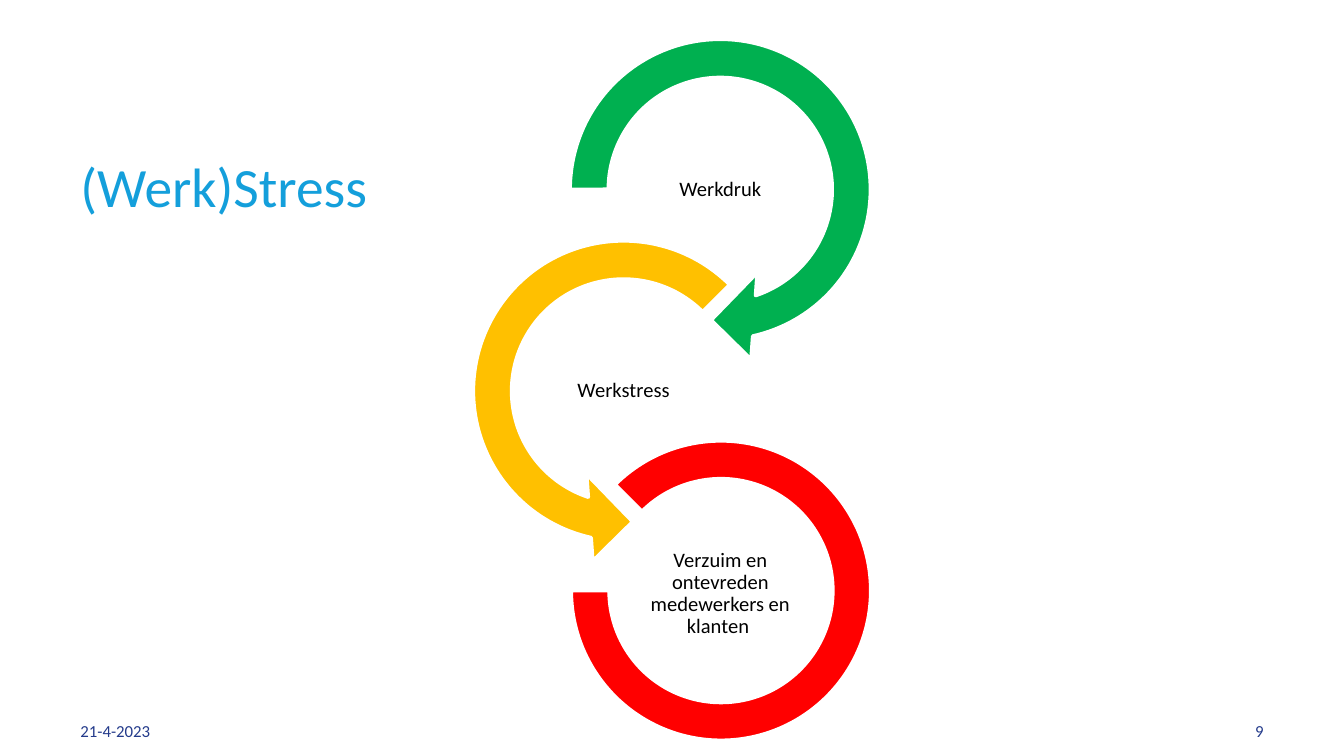
"""Build the (Werk)Stress slide: three chained ring arrows with labels."""
from pptx import Presentation
from pptx import util as u
from pptx.dml.color import RGBColor
from pptx.enum import shapes, text

COLOURS = {
    "green": "00B050",
    "amber": "FFC000",
    "red": "FF0000",
    "white": "FFFFFF",
    "black": "000000",
    "title": "149FDB",
    "footer": "243B8B",
}
FONT = "Calibri"
LABEL_SIZE = (1.44, 0.72)
LABEL_INSETS = (0.01, 0.01, 0.01, 0.01)


def colour(name):
    """Return the named colour."""
    return RGBColor.from_string(COLOURS[name])


def add_text(slide, words, box, size, colour_name, insets,
             anchor=text.MSO_ANCHOR.TOP, align=text.PP_ALIGN.LEFT, spacing=1.0):
    """Add a wrapped text box with one paragraph."""
    shape = slide.shapes.add_textbox(*map(u.Inches, box))
    frame = shape.text_frame
    frame.word_wrap = True
    frame.vertical_anchor = anchor
    (frame.margin_left, frame.margin_top,
     frame.margin_right, frame.margin_bottom) = map(u.Inches, insets)
    paragraph = frame.paragraphs[0]
    paragraph.text = words
    paragraph.alignment = align
    paragraph.line_spacing = spacing
    paragraph.font.name = FONT
    paragraph.font.size = u.Pt(size)
    paragraph.font.color.rgb = colour(colour_name)


def add_ring(slide, kind, box, colour_name, adjustments):
    """Add a ring-like shape with a white outline."""
    shape = slide.shapes.add_shape(kind, *map(u.Inches, box))
    shape.shadow.inherit = False
    shape.fill.solid()
    shape.fill.fore_color.rgb = colour(colour_name)
    shape.line.color.rgb = colour("white")
    shape.line.width = u.Pt(2)
    for index, value in enumerate(adjustments):
        shape.adjustments[index] = value


def add_label(slide, words, left, top):
    """Add a centred label inside a ring."""
    add_text(slide, words, (left, top, *LABEL_SIZE), 11, "black", LABEL_INSETS,
             text.MSO_ANCHOR.MIDDLE, text.PP_ALIGN.CENTER, 0.9)


def add_footer(slide, words, left, top_inset, align):
    """Add a small text at the foot of the slide."""
    add_text(slide, words, (left, 5.21, 2.33, 0.3), 9, "footer",
             (0.1, top_inset, 0.1, 0), text.MSO_ANCHOR.BOTTOM, align)


def main():
    """Create and save the presentation."""
    presentation = Presentation()
    presentation.slide_width = u.Inches(10)
    presentation.slide_height = u.Inches(10 * 9 / 16)
    slide = presentation.slides.add_slide(presentation.slide_layouts[6])

    add_footer(slide, "21-4-2023", 0.5, 0, text.PP_ALIGN.LEFT)
    add_footer(slide, "9", 7.17, 0.05, text.PP_ALIGN.RIGHT)

    kinds = shapes.MSO_SHAPE
    steps = [
        ("Werkdruk", (4.64, 1.05), kinds.CIRCULAR_ARROW, (4.06, 0.11, 2.6, 2.6),
         "green", (0.11, 11.42, 45, 108, 0.125)),
        ("Werkstress", (3.92, 2.55), kinds.LEFT_CIRCULAR_ARROW, (3.34, 1.61, 2.6, 2.6),
         "amber", (0.11, 11.42, 63, 189, 0.125)),
        ("Verzuim en ontevreden medewerkers en klanten ", (4.64, 4.06),
         kinds.BLOCK_ARC, (4.25, 3.28, 2.23, 2.23), "red", (135, 108, 0.127)),
    ]
    for words, label_at, kind, box, colour_name, adjustments in steps:
        add_ring(slide, kind, box, colour_name, adjustments)
        add_label(slide, words, *label_at)

    add_text(slide, "(Werk)Stress", (0.5, 1.08, 9, 0.6), 29.7, "title",
             (0.1, 0.05, 0.1, 0))
    presentation.save("out.pptx")


if __name__ == "__main__":
    main()
